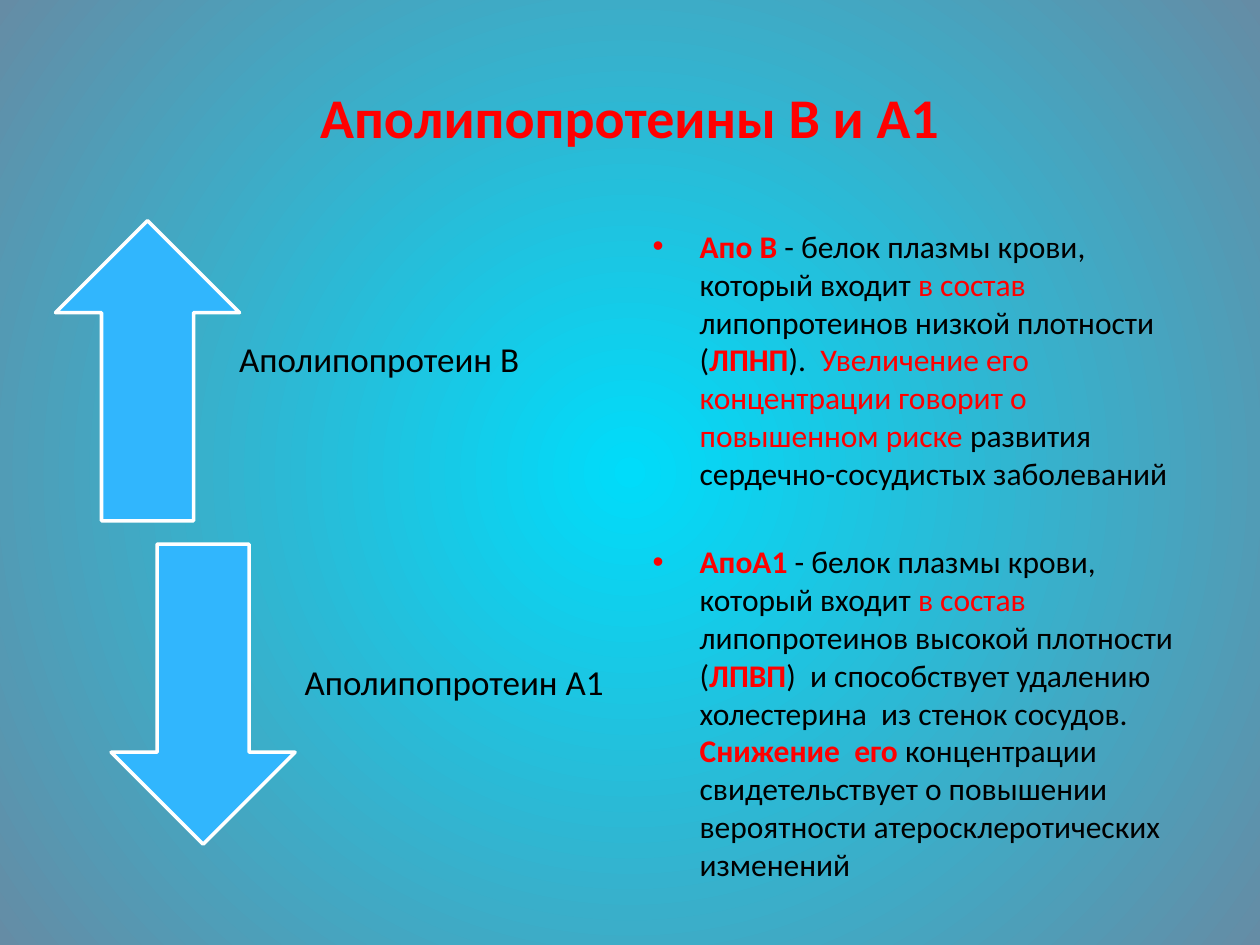
"""Build a slide on apolipoproteins B and A1."""
from dataclasses import dataclass

from lxml.etree import SubElement
from pptx import Presentation
from pptx.dml.color import RGBColor
from pptx.enum.shapes import MSO_SHAPE
from pptx.enum.text import MSO_ANCHOR, MSO_AUTO_SIZE, PP_ALIGN
from pptx.oxml.ns import qn
from pptx.util import Cm, Pt


@dataclass(frozen=True)
class Theme:
    """Colours, font and type sizes of the slide."""
    font: str = "Calibri"
    text: str = "000000"
    accent: str = "FF0000"
    arrow: str = "31B6FD"
    outline: str = "FFFFFF"
    centre: str = "00DCFA"
    edge: str = "658CA5"
    title_size: int = 32
    label_size: int = 20
    body_size: int = 18


THEME = Theme()
PLAIN, RED, STRONG = (THEME.text, False), (THEME.accent, False), (THEME.accent, True)
TOP, ROW_HEIGHT, ROW_STEP, ARROW_WIDTH = 4.45, 6.05, 6.52, 3.71

ROWS = [
    (MSO_SHAPE.UP_ARROW, 1.12, "Аполипопротеин В", 4.42, 7.34),
    (MSO_SHAPE.DOWN_ARROW, 2.24, "Аполипопротеин А1", 5.74, 6.88),
]

FACTS = [
    (3.6, [
        ("Апо В", STRONG),
        (" - белок плазмы крови, который входит ", PLAIN),
        ("в состав  ", RED),
        ("липопротеинов низкой плотности (", PLAIN),
        ("ЛПНП", STRONG),
        (").  ", PLAIN),
        ("Увеличение его концентрации говорит о повышенном риске ", RED),
        ("развития сердечно-сосудистых заболеваний", PLAIN),
    ]),
    (29, [
        ("АпоА1", STRONG),
        (" - белок плазмы крови, который входит ", PLAIN),
        ("в состав ", RED),
        ("липопротеинов высокой плотности (", PLAIN),
        ("ЛПВП", STRONG),
        (")  и способствует удалению холестерина  из стенок сосудов. ", PLAIN),
        ("Снижение  его ", STRONG),
        ("концентрации свидетельствует о повышении вероятности "
         "атеросклеротических изменений", PLAIN),
    ]),
]


def rgb(value):
    """Return a colour from its hex value."""
    return RGBColor.from_string(value)


def place(sp, left, top, width, height):
    """Move and size a shape, in centimetres."""
    sp.left, sp.top, sp.width, sp.height = map(Cm, (left, top, width, height))


def add_run(p, text, size, style):
    """Add one formatted run to a paragraph."""
    r = p.add_run()
    r.text = text
    r.font.name, r.font.size = THEME.font, Pt(size)
    color, r.font.bold = style
    r.font.color.rgb = rgb(color)


def set_background(s):
    """Fill the background with a gradient spreading from the centre."""
    fill = s.background.fill
    fill.gradient()
    for stop, color in zip(fill.gradient_stops, (THEME.centre, THEME.edge)):
        stop.color.rgb = rgb(color)
    grad = next(s.element.iter(qn("a:gradFill")))
    grad.remove(grad.find(qn("a:lin")))
    circle = SubElement(grad, qn("a:path"), path="circle")
    SubElement(circle, qn("a:fillToRect"), dict.fromkeys("ltrb", "50000"))


def set_title(sp, text):
    """Write the slide title."""
    place(sp, 1.27, 0.76, 22.86, 3.18)
    tf = sp.text_frame
    tf.vertical_anchor = MSO_ANCHOR.MIDDLE
    p = tf.paragraphs[0]
    p.alignment = PP_ALIGN.CENTER
    add_run(p, text, THEME.title_size, STRONG)


def add_arrow(shapes, kind, left, top):
    """Add a block arrow."""
    sp = shapes.add_shape(kind, Cm(left), Cm(top), Cm(ARROW_WIDTH), Cm(ROW_HEIGHT))
    sp.shadow.inherit = False
    sp.fill.solid()
    sp.fill.fore_color.rgb = rgb(THEME.arrow)
    sp.line.color.rgb = rgb(THEME.outline)
    sp.line.width = Pt(2)


def add_label(shapes, text, left, top, width):
    """Add the label beside an arrow."""
    sp = shapes.add_textbox(Cm(left), Cm(top), Cm(width), Cm(ROW_HEIGHT))
    tf = sp.text_frame
    tf.word_wrap = True
    tf.vertical_anchor = MSO_ANCHOR.MIDDLE
    tf.margin_left = tf.margin_right = tf.margin_bottom = Cm(0.4)
    tf.margin_top = 0
    p = tf.paragraphs[0]
    p.line_spacing = 0.9
    add_run(p, text, THEME.label_size, PLAIN)


def set_bullet(p):
    """Give a paragraph a round bullet and a hanging indent."""
    pPr = p._p.get_or_add_pPr()
    pPr.set("marL", str(Cm(0.95)))
    pPr.set("indent", str(-Cm(0.95)))
    SubElement(pPr, qn("a:buFont"), typeface="Arial")
    SubElement(pPr, qn("a:buChar"), char="•")


def set_facts(sp):
    """Write the bulleted facts into the body."""
    place(sp, 12.9, TOP, 11.23, 12.57)
    tf = sp.text_frame
    tf.auto_size = MSO_AUTO_SIZE.NONE
    for i, (space, runs) in enumerate(FACTS):
        p = tf.add_paragraph() if i else tf.paragraphs[0]
        p.space_before = Pt(space)
        set_bullet(p)
        for text, style in runs:
            add_run(p, text, THEME.body_size, style)


def main():
    """Build and save the slide."""
    prs = Presentation()
    prs.slide_width, prs.slide_height = Cm(25.4), Cm(19.05)
    s = prs.slides.add_slide(prs.slide_layouts[1])
    set_background(s)
    set_title(s.shapes.title, "Аполипопротеины В и А1")
    group = s.shapes.add_group_shape()
    for i, (kind, left, text, label_left, label_width) in enumerate(ROWS):
        top = TOP + i * ROW_STEP
        add_arrow(group.shapes, kind, left, top)
        add_label(group.shapes, text, label_left, top, label_width)
    set_facts(s.placeholders[1])
    prs.save("out.pptx")


if __name__ == "__main__":
    main()
